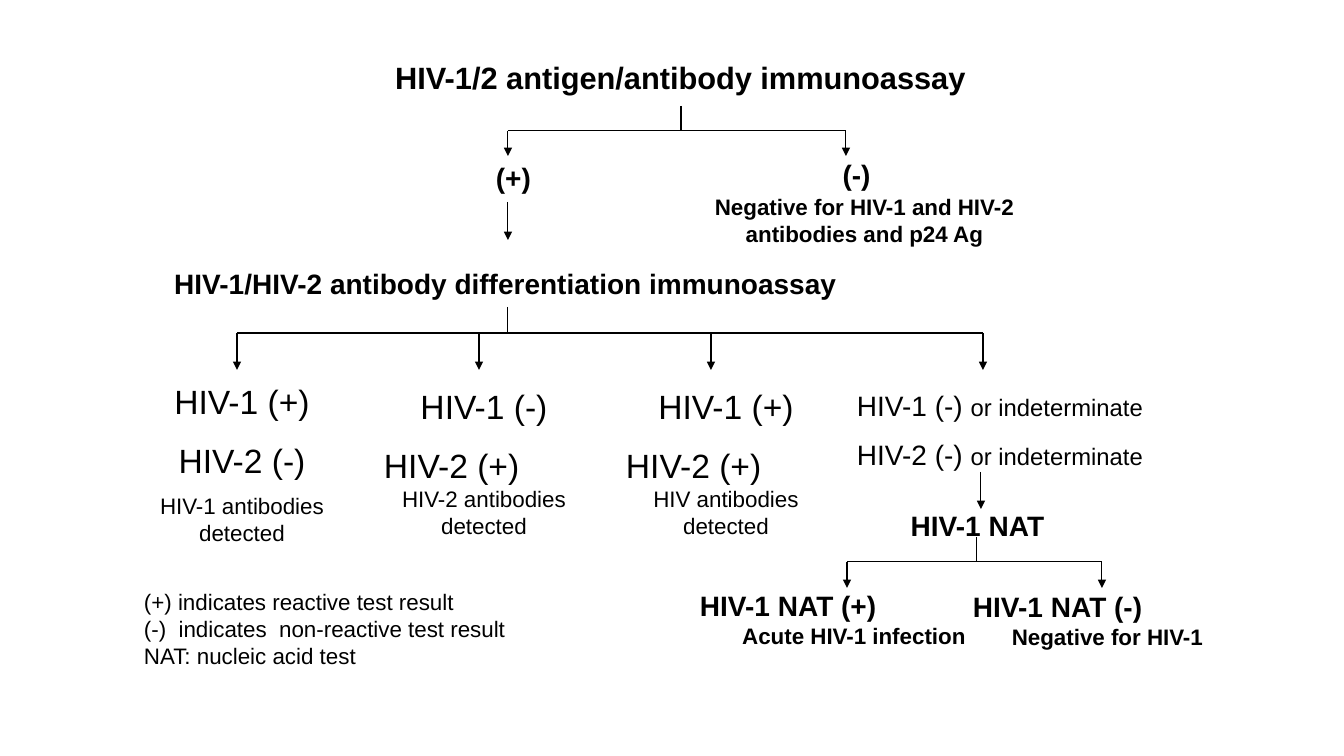
"""Build the HIV-1/2 laboratory testing algorithm slide."""
from dataclasses import dataclass

from lxml.etree import SubElement
from pptx import Presentation
from pptx.dml.color import RGBColor
from pptx.enum.shapes import MSO_CONNECTOR
from pptx.enum.text import PP_ALIGN
from pptx.oxml.ns import qn
from pptx.util import Inches, Pt


@dataclass(frozen=True)
class Theme:
    ink: RGBColor = RGBColor(0, 0, 0)
    paper: RGBColor = RGBColor(255, 255, 255)
    font: str = "Arial"
    title: int = 22
    result: int = 24
    step: int = 20
    qualifier: int = 17
    note: int = 16
    rule: float = 0.75


THEME = Theme()
PX = Inches(1) / 100.8
INSET_X, INSET_Y = 9, 5
SLIDE_SIZE = (1344, 756)

STEPS = [
    ("HIV-1/2 antigen/antibody immunoassay", THEME.title, (323, 54, 715, 46)),
    ("HIV-1/HIV-2 antibody differentiation immunoassay", THEME.step, (122, 261, 767, 76)),
    ("(-)", THEME.step, (635, 153, 443, 43)),
    ("(+)", THEME.step, (465, 156, 97, 43)),
    ("HIV-1 NAT", THEME.step, (823, 504, 309, 43)),
    ("Negative for HIV-1 and HIV-2 antibodies and p24 Ag", THEME.note, (657, 188, 415, 65)),
]

FIRST_PATTERN = ("HIV-1 (+)", "HIV-2 (-)", "HIV-1 antibodies detected", (121, 376, 242, 178))
SHIFTED_PATTERNS = [
    ("HIV-1 (-)", "HIV-2 (+)", "HIV-2 antibodies detected", (363, 381, 242, 165)),
    ("HIV-1 (+)", "HIV-2 (+)", "HIV antibodies detected", (605, 381, 242, 165)),
]
SECOND_TEST_INDENT = 12

INDETERMINATE = ["HIV-1 (-) ", "HIV-2 (-) "]
INDETERMINATE_BOX = (810, 383, 380, 94)

NAT_OUTCOMES = [
    ("HIV-1 NAT (+)", "Acute HIV-1 infection", (691, 583, 309, 71)),
    ("HIV-1 NAT (-)", "Negative for HIV-1", (964, 584, 270, 71)),
]
OUTCOME_INDENT = 17

LEGEND = [
    "(+) indicates reactive test result",
    "(-)  indicates  non-reactive test result",
    "NAT: nucleic acid test",
]
LEGEND_BOX = (135, 583, 501, 90)

BRANCHES = [
    {"stem": 681, "top": 106, "bar": 131, "tip": 156, "children": [508, 846]},
    {"stem": 508, "top": 307, "bar": 333, "tip": 370, "children": [237, 479, 711, 983]},
    {"stem": 977, "top": 537, "bar": 562, "tip": 588, "children": [847, 1102]},
]
ARROWS = [(508, 202, 240), (981, 472, 509)]


def emu(px):
    return round(px * PX)


def add_text(slide, box, paragraphs, align=PP_ALIGN.CENTER, bold=False):
    """Place paragraphs given as dicts of runs and optional before, indent and align."""
    frame = slide.shapes.add_textbox(*map(emu, box)).text_frame
    frame.word_wrap = True
    frame.margin_left = frame.margin_right = emu(INSET_X)
    frame.margin_top = frame.margin_bottom = emu(INSET_Y)
    for index, content in enumerate(paragraphs):
        paragraph = frame.add_paragraph() if index else frame.paragraphs[0]
        paragraph.alignment = content.get("align", align)
        paragraph.space_before = Pt(content.get("before", 0))
        if "indent" in content:
            paragraph._p.get_or_add_pPr().set("marL", str(emu(content["indent"])))
        for words, size in content["runs"]:
            run = paragraph.add_run()
            run.text = words
            run.font.name = THEME.font
            run.font.size = Pt(size)
            run.font.bold = bold
            run.font.color.rgb = THEME.ink


def add_line(slide, start, end, arrow=False):
    line = slide.shapes.add_connector(MSO_CONNECTOR.STRAIGHT, *map(emu, start + end))
    line.line.color.rgb = THEME.ink
    line.line.width = Pt(THEME.rule)
    if arrow:
        SubElement(line.line._get_or_add_ln(), qn("a:tailEnd"), type="triangle")
    SubElement(line._element.spPr, qn("a:effectLst"))


def add_branch(slide, stem, top, bar, tip, children):
    add_line(slide, (stem, top), (stem, bar))
    add_line(slide, (children[0], bar), (children[-1], bar))
    for child in children:
        add_line(slide, (child, bar), (child, tip), arrow=True)


def main():
    deck = Presentation()
    deck.slide_width, deck.slide_height = map(emu, SLIDE_SIZE)
    slide = deck.slides.add_slide(deck.slide_layouts[6])
    slide.background.fill.solid()
    slide.background.fill.fore_color.rgb = THEME.paper

    for branch in BRANCHES:
        add_branch(slide, **branch)
    for x, top, tip in ARROWS:
        add_line(slide, (x, top), (x, tip), arrow=True)

    for words, size, box in STEPS:
        add_text(slide, box, [{"runs": [(words, size)]}], bold=True)

    first, second, finding, box = FIRST_PATTERN
    add_text(slide, box, [
        {"runs": [(first, THEME.result)]},
        {"runs": [(second, THEME.result)], "before": 13},
        {"runs": [(finding, THEME.note)], "before": 9},
    ])
    for first, second, finding, box in SHIFTED_PATTERNS:
        add_text(slide, box, [
            {"runs": [(first, THEME.result)]},
            {"runs": [(second, THEME.result)], "before": 13,
             "align": PP_ALIGN.LEFT, "indent": SECOND_TEST_INDENT},
            {"runs": [(finding, THEME.note)]},
        ])

    add_text(slide, INDETERMINATE_BOX, [
        {"runs": [(test, THEME.step), ("or indeterminate", THEME.qualifier)],
         "before": 11 if row else 0}
        for row, test in enumerate(INDETERMINATE)
    ])
    for test, meaning, box in NAT_OUTCOMES:
        add_text(slide, box, [
            {"runs": [(test, THEME.step)], "align": PP_ALIGN.LEFT},
            {"runs": [(meaning, THEME.note)], "indent": OUTCOME_INDENT},
        ], bold=True)
    add_text(slide, LEGEND_BOX, [{"runs": [(entry, THEME.note)]} for entry in LEGEND],
             align=PP_ALIGN.LEFT)

    deck.save("out.pptx")


if __name__ == "__main__":
    main()
